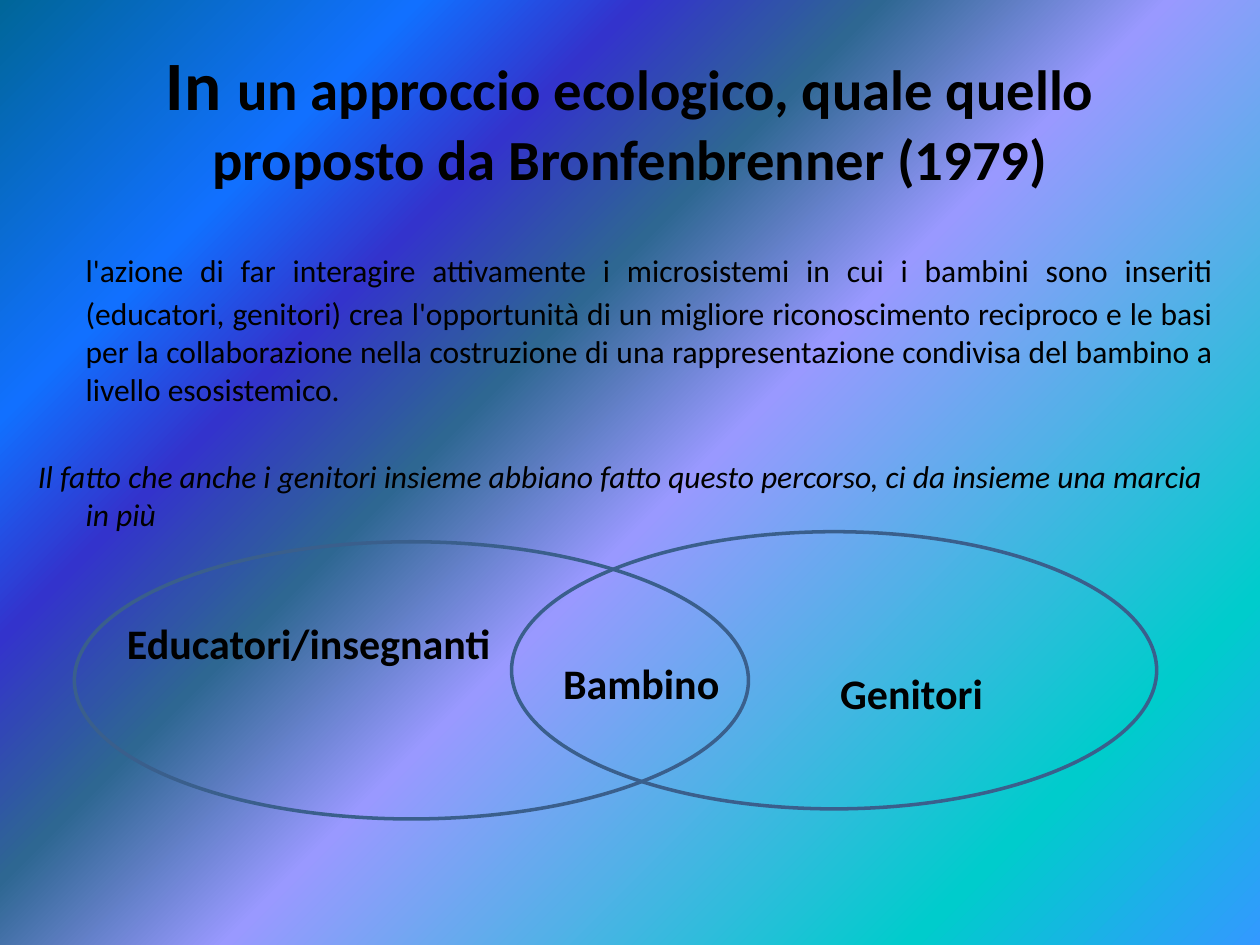
from pptx import Presentation
from pptx.dml.color import RGBColor
from pptx.enum.shapes import MSO_SHAPE
from pptx.enum.text import MSO_ANCHOR, MSO_AUTO_SIZE, PP_ALIGN
from pptx.oxml import parse_xml
from pptx.oxml.ns import nsdecls, qn
from pptx.util import Inches, Pt

INK = RGBColor(0x00, 0x00, 0x00)
RING = RGBColor(0x3A, 0x5F, 0x8C)
STOPS = [
    (0, RGBColor(0x33, 0x99, 0xFF)),
    (16, RGBColor(0x00, 0xCC, 0xCC)),
    (47, RGBColor(0x99, 0x99, 0xFF)),
    (60, RGBColor(0x2E, 0x67, 0x92)),
    (71, RGBColor(0x33, 0x33, 0xCC)),
    (81, RGBColor(0x11, 0x70, 0xFF)),
    (100, RGBColor(0x00, 0x66, 0x99)),
]


class Deck:
    """Style and current slide; lengths are cells of a 100 x 75 grid."""

    font = "Calibri"
    cell = Inches(0.1)

    def __init__(self):
        self.prs = Presentation()
        self.prs.slide_width = 100 * self.cell
        self.prs.slide_height = 75 * self.cell
        self.slide = self.prs.slides.add_slide(self.prs.slide_layouts[1])

    def size(self, *cells):
        return [round(n * self.cell) for n in cells]

    def place(self, shape, *box):
        shape.left, shape.top, shape.width, shape.height = self.size(*box)

    def fill_in(self, para, *parts, bold=False, italic=False):
        for text, size in parts:
            run = para.add_run()
            run.text = text
            font = run.font
            font.name, font.size = self.font, Pt(size)
            font.bold, font.italic = bold, italic
            font.color.rgb = INK

    def backdrop(self, stops):
        # A gradient that spreads from the lower right corner
        fill = self.slide.background.fill
        fill.gradient()
        old = next(self.slide.element.iter(qn("a:gradFill")))
        marks = "".join(
            f'<a:gs pos="{pos * 1000}"><a:srgbClr val="{tint}"/></a:gs>'
            for pos, tint in stops)
        new = parse_xml(
            f'<a:gradFill {nsdecls("a")} rotWithShape="0">'
            f'<a:gsLst>{marks}</a:gsLst><a:path path="circle">'
            '<a:fillToRect l="100000" t="100000"/></a:path>'
            '<a:tileRect r="-100000" b="-100000"/></a:gradFill>')
        old.getparent().replace(old, new)

    def title(self, box, *parts):
        shape = self.slide.shapes.title
        self.place(shape, *box)
        frame = shape.text_frame
        frame.auto_size = MSO_AUTO_SIZE.NONE
        frame.vertical_anchor = MSO_ANCHOR.MIDDLE
        para = frame.paragraphs[0]
        para.alignment = PP_ALIGN.CENTER
        self.fill_in(para, *parts, bold=True)

    def body(self, box):
        shape = self.slide.placeholders[1]
        self.place(shape, *box)
        shape.text_frame.auto_size = MSO_AUTO_SIZE.NONE
        return shape.text_frame

    def hang(self, para, *parts, align, gap, italic=False):
        # A paragraph without bullet and with a hanging first line
        para.alignment = align
        para.space_before = Pt(gap)
        props = para._p.get_or_add_pPr()
        props.set("marL", str(Inches(0.38)))
        props.set("indent", str(-Inches(0.38)))
        props.append(parse_xml(f'<a:buNone {nsdecls("a")}/>'))
        self.fill_in(para, *parts, italic=italic)

    def ring(self, *box):
        shape = self.slide.shapes.add_shape(MSO_SHAPE.OVAL, *self.size(*box))
        shape.shadow.inherit = False
        shape.fill.background()
        shape.line.color.rgb = RING
        shape.line.width = Pt(2)

    def label(self, text, *box):
        shape = self.slide.shapes.add_textbox(*self.size(*box))
        frame = shape.text_frame
        frame.word_wrap = True
        frame.auto_size = MSO_AUTO_SIZE.SHAPE_TO_FIT_TEXT
        self.fill_in(frame.paragraphs[0], (text, 24), bold=True)


def main():
    deck = Deck()
    deck.backdrop(STOPS)

    # Title
    deck.title(
        (5, 3, 90, 12.5), ("In ", 39.6),
        ("un approccio ecologico, quale quello proposto da "
         "Bronfenbrenner (1979)", 32.4))

    # Body: the theory, then the remark in italics
    body = deck.body((2, 17.5, 95.3, 49.5))
    deck.hang(
        body.paragraphs[0], ("\t", 32),
        ("l'azione di far interagire attivamente i microsistemi in cui i "
         "bambini sono inseriti (educatori, genitori) crea l'opportunità di "
         "un migliore riconoscimento reciproco e le basi per la "
         "collaborazione nella costruzione di una rappresentazione condivisa "
         "del bambino a livello esosistemico.", 18),
        align=PP_ALIGN.JUSTIFY, gap=4)
    deck.hang(
        body.add_paragraph(),
        ("Il fatto che anche i genitori insieme abbiano fatto questo "
         "percorso, ci da insieme una marcia in più", 18),
        align=PP_ALIGN.LEFT, gap=28.5, italic=True)

    # Two overlapping rings
    deck.ring(40.6, 42.2, 51.2, 22)
    deck.ring(5.9, 43, 53.5, 22)

    # Labels
    deck.label("Genitori", 65.7, 52.5, 16.5, 5)
    deck.label("Educatori/insegnanti", 9.1, 48.5, 32.3, 5)
    deck.label("Bambino", 43.7, 51.7, 16.5, 5)

    deck.prs.save("out.pptx")


if __name__ == "__main__":
    main()
